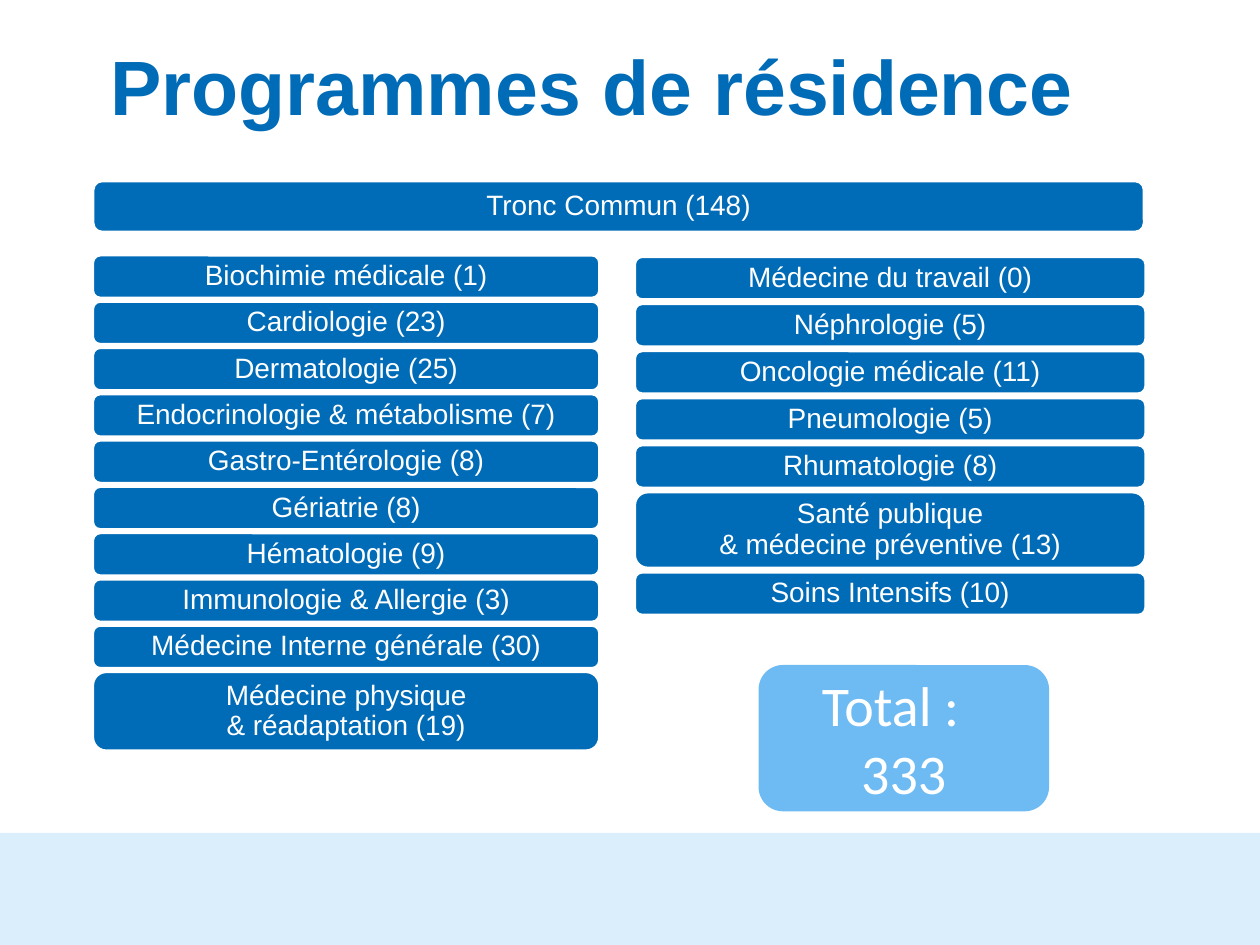
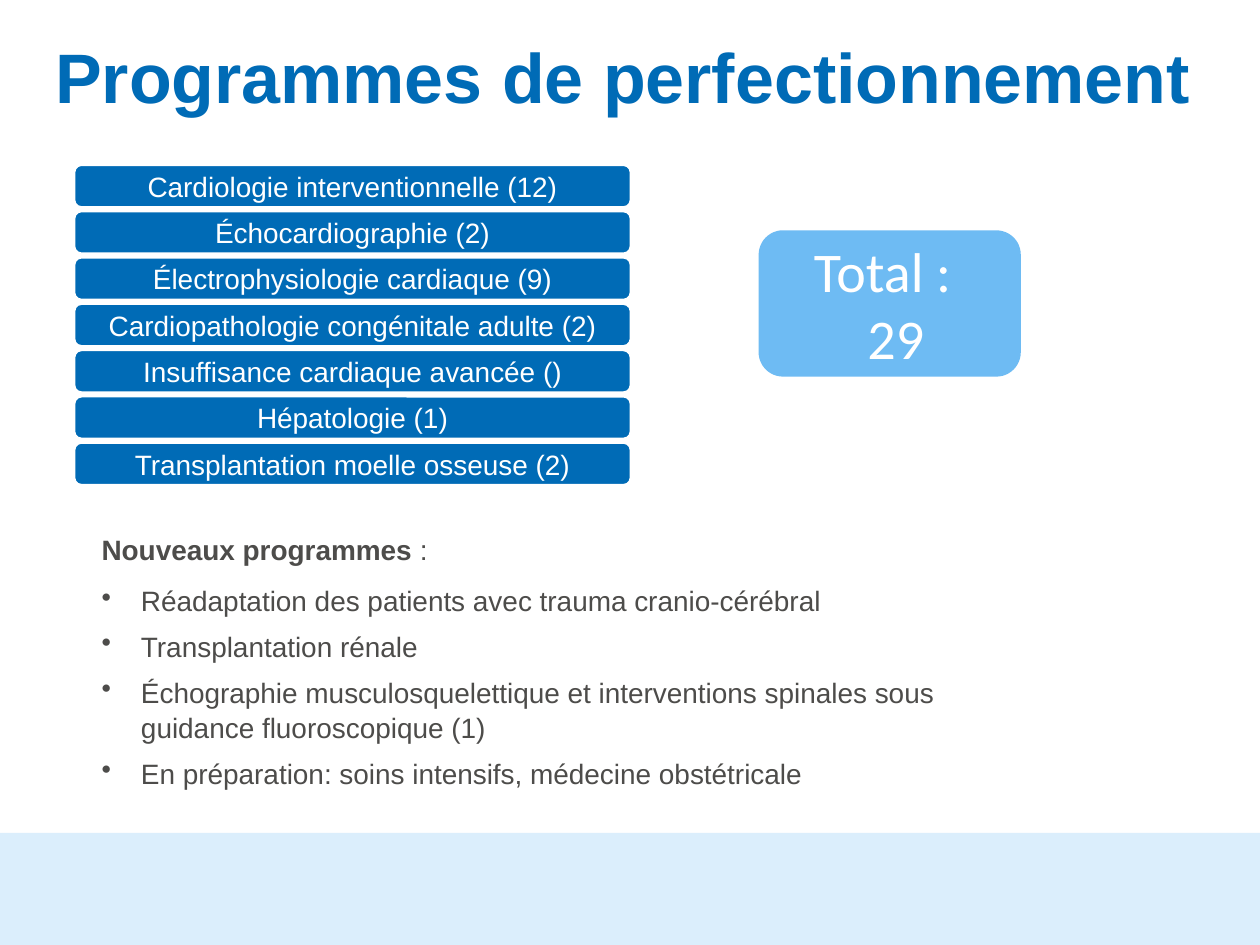
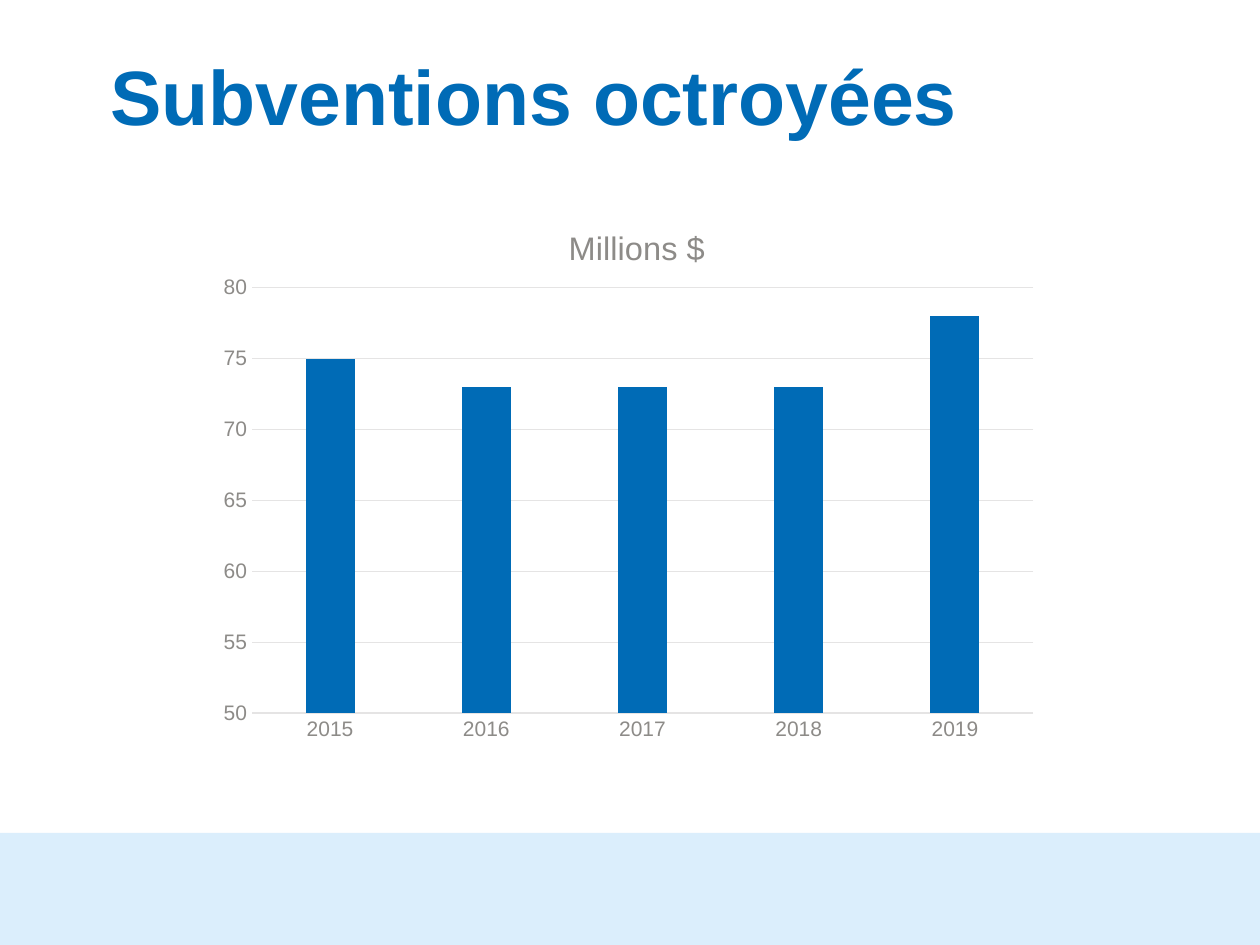
"""Build three slides on residency programmes, fellowships and grants."""
from dataclasses import dataclass

import pptx
import pptx.chart.data
import pptx.dml.color
import pptx.enum.chart
import pptx.enum.shapes
import pptx.enum.text
import pptx.oxml
import pptx.oxml.ns
import pptx.util

Pt = pptx.util.Pt
RGBColor = pptx.dml.color.RGBColor
SHAPE = pptx.enum.shapes.MSO_SHAPE
ALIGN = pptx.enum.text.PP_ALIGN
ANCHOR = pptx.enum.text.MSO_ANCHOR
qn = pptx.oxml.ns.qn

BLUE = RGBColor(0x00, 0x6B, 0xB6)
SKY = RGBColor(0x6E, 0xBB, 0xF3)
PALE = RGBColor(0xDB, 0xEE, 0xFC)
WHITE = RGBColor(0xFF, 0xFF, 0xFF)
DARK = RGBColor(0x4D, 0x4C, 0x4A)
GREY = RGBColor(0x8D, 0x8B, 0x88)
RULE = RGBColor(0xE5, 0xE4, 0xE4)
FONT = "Arial"
WIDTH, HEIGHT = 720, 540
BAND = 476
BAR = 23.9


@dataclass
class Box:
    """A place on the slide, in points."""
    left: float
    top: float
    width: float
    height: float

    def args(self):
        """Give the four lengths in slide units."""
        return [Pt(n) for n in (self.left, self.top, self.width, self.height)]


@dataclass
class Stack:
    """A column of bars; a bar with two lines has the height tall."""
    left: float
    top: float
    width: float
    gap: float
    items: list[str]
    tall: float = BAR
    space: float = 0.9


LEFT = Stack(53.3, 146.1, 289, 2.55, [
    "Biochimie médicale (1)",
    "Cardiologie (23)",
    "Dermatologie (25)",
    "Endocrinologie & métabolisme (7)",
    "Gastro-Entérologie (8)",
    "Gériatrie (8)",
    "Hématologie (9)",
    "Immunologie & Allergie (3)",
    "Médecine Interne générale (30)",
    "Médecine physique\n& réadaptation (19)",
], 44.6)
RIGHT = Stack(363, 147, 291.4, 3, [
    "Médecine du travail (0)",
    "Néphrologie (5)",
    "Oncologie médicale (11)",
    "Pneumologie (5)",
    "Rhumatologie (8)",
    "Santé publique\n& médecine préventive (13)",
    "Soins Intensifs (10)",
], 42.8)
EXTRA = Stack(42.6, 94.4, 317.7, 2.55, [
    "Cardiologie interventionnelle (12)",
    "Échocardiographie (2)",
    "Électrophysiologie cardiaque (9)",
    "Cardiopathologie congénitale adulte (2)",
    "Insuffisance cardiaque avancée ()",
    "Hépatologie (1)",
    "Transplantation moelle osseuse (2)",
], space=1)
PLANS = [
    "Réadaptation des patients avec trauma cranio-cérébral",
    "Transplantation rénale",
    "Échographie musculosquelettique et interventions spinales sous "
    "guidance fluoroscopique (1)",
    "En préparation: soins intensifs, médecine obstétricale",
]
GRANTS = {"2015": 75, "2016": 73, "2017": 73, "2018": 73, "2019": 78}


def write(frame, text: str, *, size=16, color=WHITE, font=FONT, bold=False,
          align=ALIGN.LEFT, space=1.0, before=0, after=0, indent=0,
          bullet=False, tail=""):
    """Add one paragraph, with an optional tail that is not bold."""
    para = frame.add_paragraph() if frame.text else frame.paragraphs[0]
    if indent:
        props = para._p.get_or_add_pPr()
        props.set("marL", str(Pt(indent)))
        if bullet:
            props.set("indent", str(-Pt(indent)))
            mark = pptx.oxml.parse_xml(
                f'<a:buChar {pptx.oxml.ns.nsdecls("a")} char="•"/>')
            props.append(mark)
    para.alignment = align
    para.line_spacing = space
    para.space_before, para.space_after = Pt(before), Pt(after)
    for part, heavy in ((text, bold), (tail, False)):
        if part:
            run = para.add_run()
            run.text = part
            run.font.name, run.font.size = font, Pt(size)
            run.font.bold = heavy
            run.font.color.rgb = color


def block(slide, kind, box: Box, fill: RGBColor, edge: RGBColor | None = None):
    """Draw a filled shape and return its text frame."""
    shape = slide.shapes.add_shape(kind, *box.args())
    shape.shadow.inherit = False
    shape.fill.solid()
    shape.fill.fore_color.rgb = fill
    if edge is None:
        shape.line.fill.background()
    else:
        shape.line.color.rgb = edge
        shape.line.width = Pt(1)
    frame = shape.text_frame
    frame.word_wrap = True
    frame.vertical_anchor = ANCHOR.MIDDLE
    frame.margin_left = frame.margin_right = Pt(5)
    frame.margin_top = frame.margin_bottom = Pt(2)
    return frame


def label(slide, box: Box, anchor=ANCHOR.TOP):
    """Add a wrapping text box and return its text frame."""
    frame = slide.shapes.add_textbox(*box.args()).text_frame
    frame.word_wrap = True
    frame.vertical_anchor = anchor
    return frame


def page(deck, title: str, box: Box, size=44):
    """Add a slide with the bottom band and a title."""
    slide = deck.slides.add_slide(deck.slide_layouts[6])
    block(slide, SHAPE.RECTANGLE, Box(0, BAND, WIDTH, HEIGHT - BAND), PALE)
    write(label(slide, box, ANCHOR.BOTTOM), title, size=size, color=BLUE,
          bold=True, space=0.9)
    return slide


def bar(slide, box: Box, text: str, space: float):
    """Draw one programme bar."""
    frame = block(slide, SHAPE.ROUNDED_RECTANGLE, box, BLUE, WHITE)
    for line in text.split("\n"):
        write(frame, line, align=ALIGN.CENTER, space=space)


def pile(slide, stack: Stack):
    """Draw the bars of a stack from top to bottom."""
    top = stack.top
    for text in stack.items:
        high = stack.tall if "\n" in text else BAR
        bar(slide, Box(stack.left, top, stack.width, high), text, stack.space)
        top += high + stack.gap


def total(slide, box: Box, count: int, inset: float):
    """Draw the total, its number set a little to the right."""
    frame = block(slide, SHAPE.ROUNDED_RECTANGLE, box, SKY)
    frame.margin_left, frame.margin_right = 0, Pt(inset)
    for text, indent in (("Total :", 0), (str(count), 15)):
        write(frame, text, size=32, font="Calibri", align=ALIGN.CENTER,
              indent=indent)


def place(node, index: int, inner=False, **parts: float):
    """Fix the place of a chart part, as shares of the chart."""
    for old in node.findall(qn("c:layout")):
        node.remove(old)
    target = '<c:layoutTarget val="inner"/>' if inner else ""
    modes = "".join(f'<c:{key}Mode val="edge"/>' for key in "xy")
    sizes = "".join(f'<c:{key} val="{val}"/>' for key, val in parts.items())
    node.insert(index, pptx.oxml.parse_xml(
        f'<c:layout {pptx.oxml.ns.nsdecls("c")}><c:manualLayout>'
        f'{target}{modes}{sizes}</c:manualLayout></c:layout>'))


def graph(slide, box: Box):
    """Draw the column chart of grants."""
    data = pptx.chart.data.CategoryChartData()
    data.categories = list(GRANTS)
    data.add_series("Series 1", list(GRANTS.values()))
    kind = pptx.enum.chart.XL_CHART_TYPE.COLUMN_CLUSTERED
    chart = slide.shapes.add_chart(kind, *box.args(), data).chart
    chart.has_legend = False
    chart.font.name, chart.font.size = FONT, Pt(10)
    chart.font.color.rgb = DARK
    chart.has_title = True
    write(chart.chart_title.text_frame, "Millions $", size=18.6, color=GREY,
          align=ALIGN.CENTER)
    chart.chart_title.include_in_layout = False

    plot = chart.plots[0]
    plot.gap_width, plot.overlap = 219, -27
    plot.vary_by_categories = False
    fill = plot.series[0].format.fill
    fill.solid()
    fill.fore_color.rgb = BLUE

    none = pptx.enum.chart.XL_TICK_MARK.NONE
    cats, vals = chart.category_axis, chart.value_axis
    for axis in (cats, vals):
        axis.major_tick_mark = axis.minor_tick_mark = none
        font = axis.tick_labels.font
        font.name, font.size, font.color.rgb = FONT, Pt(12), GREY
    vals.minimum_scale, vals.maximum_scale, vals.major_unit = 50, 80, 5
    vals.format.line.fill.background()
    for line in (cats.format.line, vals.major_gridlines.format.line):
        line.color.rgb, line.width = RULE, Pt(0.75)

    root = chart.element.find(qn("c:chart"))
    place(root.find(qn("c:title")), 1, x=0.42, y=0.05)
    place(root.find(qn("c:plotArea")), 0, inner=True,
          x=0.05, y=0.17, w=0.93, h=0.76)


def main():
    """Build the deck and save it."""
    deck = pptx.Presentation()
    deck.slide_width, deck.slide_height = Pt(WIDTH), Pt(HEIGHT)

    slide = page(deck, "Programmes de résidence", Box(56, 26, 608, 53))
    bar(slide, Box(53.5, 103.7, 600, 28.6), "Tronc Commun (148)", 0.9)
    pile(slide, LEFT)
    pile(slide, RIGHT)
    total(slide, Box(433.5, 380, 166, 83.6), 333, 15)

    slide = page(deck, "Programmes de perfectionnement",
                 Box(24.5, 11.5, 687.5, 60), 40)
    pile(slide, EXTRA)
    total(slide, Box(433.5, 131.6, 149.8, 83.6), 29, 8)
    frame = label(slide, Box(51, 300, 548, 170))
    write(frame, "Nouveaux programmes", color=DARK, bold=True, tail=" :",
          space=1.05, after=6)
    for plan in PLANS:
        write(frame, plan, color=DARK, space=1.05, before=3, after=3,
              indent=22.5, bullet=True)

    slide = page(deck, "Subventions octroyées", Box(56, 11, 608, 73.5))
    graph(slide, Box(120, 110, 480, 320))
    deck.save("out.pptx")


if __name__ == "__main__":
    main()
